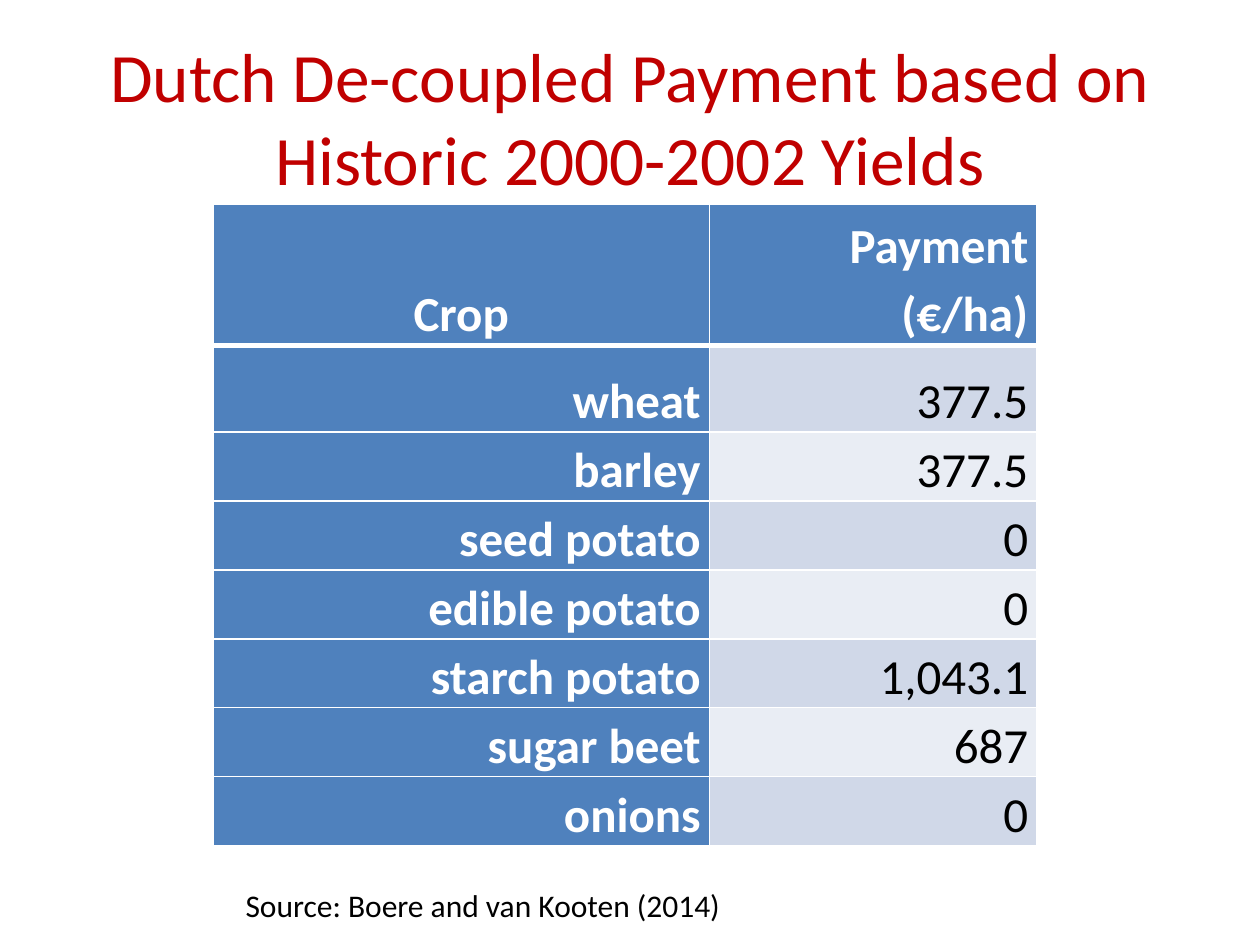
from lxml.etree import SubElement
from pptx import Presentation
from pptx.dml.color import RGBColor
from pptx.enum.text import MSO_ANCHOR, MSO_AUTO_SIZE, PP_ALIGN
from pptx.oxml.ns import qn
from pptx.util import Inches, Pt

TITLE = "Dutch De-coupled Payment based on Historic 2000-2002 Yields"
SOURCE = "Source: Boere and van Kooten (2014)"
ROWS = [
    ("Crop", "Payment (€/ha)"),
    ("wheat", "377.5"),
    ("barley", "377.5"),
    ("seed potato", "0"),
    ("edible potato", "0"),
    ("starch potato", "1,043.1"),
    ("sugar beet", "687"),
    ("onions", "0"),
]
WIDTHS = [3.94, 2.6]
HEIGHTS = [1.12, 0.69] + [0.54] * 6
COLORS = {"title": "C00000", "head": "4F81BD", "odd": "D0D8E8",
          "even": "E9EDF4", "white": "FFFFFF", "black": "000000"}
FONT = "Calibri"


def color(name):
    return RGBColor.from_string(COLORS[name])


def write(frame, text, size, tint, align=PP_ALIGN.LEFT, bold=False):
    para = frame.paragraphs[0]
    para.alignment = align
    run = para.add_run()
    run.text = text
    font = run.font
    font.name, font.size, font.bold = FONT, Pt(size), bold
    font.color.rgb = color(tint)
    return para


def add_borders(cell, top, bottom):
    """Draw white cell edges; must run before the cell gets its fill."""
    props = cell._tc.get_or_add_tcPr()
    for side, width in (("L", 1), ("R", 1), ("T", top), ("B", bottom)):
        line = SubElement(props, qn(f"a:ln{side}"), w=str(Pt(width)))
        fill = SubElement(line, qn("a:solidFill"))
        SubElement(fill, qn("a:srgbClr"), val=COLORS["white"])


def fill_cell(cell, row, col, text):
    head = row == 0 or col == 0
    cell.vertical_anchor = MSO_ANCHOR.BOTTOM
    cell.margin_left = cell.margin_right = Inches(0.07)
    cell.margin_top = cell.margin_bottom = 0
    add_borders(cell, 3 if row == 1 else 1, 3 if row == 0 else 1)
    cell.fill.solid()
    band = "odd" if row % 2 else "even"
    cell.fill.fore_color.rgb = color("head" if head else band)
    align = PP_ALIGN.CENTER if row == col == 0 else PP_ALIGN.RIGHT
    para = write(cell.text_frame, text, 28, "white" if head else "black",
                 align, head)
    para.line_spacing = 1.15


def add_title(slide):
    title = slide.shapes.title
    title.left, title.top = Inches(0.5), Inches(0.3)
    title.width, title.height = Inches(9), Inches(1.25)
    frame = title.text_frame
    frame.word_wrap = True
    frame.auto_size = MSO_AUTO_SIZE.NONE
    frame.vertical_anchor = MSO_ANCHOR.MIDDLE
    write(frame, TITLE, 39.6, "title", PP_ALIGN.CENTER)


def add_crops(slide):
    table = slide.shapes.add_table(
        len(ROWS), len(WIDTHS), Inches(1.69), Inches(1.62),
        Inches(sum(WIDTHS)), Inches(sum(HEIGHTS))).table
    table.first_col = True
    for col, width in zip(table.columns, WIDTHS):
        col.width = Inches(width)
    for row, height in zip(table.rows, HEIGHTS):
        row.height = Inches(height)
    for r, texts in enumerate(ROWS):
        for c, text in enumerate(texts):
            fill_cell(table.cell(r, c), r, c, text)


def add_source(slide):
    box = slide.shapes.add_textbox(
        Inches(1.85), Inches(6.98), Inches(4.02), Inches(0.4))
    frame = box.text_frame
    frame.word_wrap = False
    frame.auto_size = MSO_AUTO_SIZE.SHAPE_TO_FIT_TEXT
    write(frame, SOURCE, 18, "black")


def main():
    deck = Presentation()
    deck.slide_width, deck.slide_height = Inches(10), Inches(7.5)
    slide = deck.slides.add_slide(deck.slide_layouts.get_by_name("Title Only"))
    add_title(slide)
    add_crops(slide)
    add_source(slide)
    deck.save("out.pptx")


if __name__ == "__main__":
    main()
